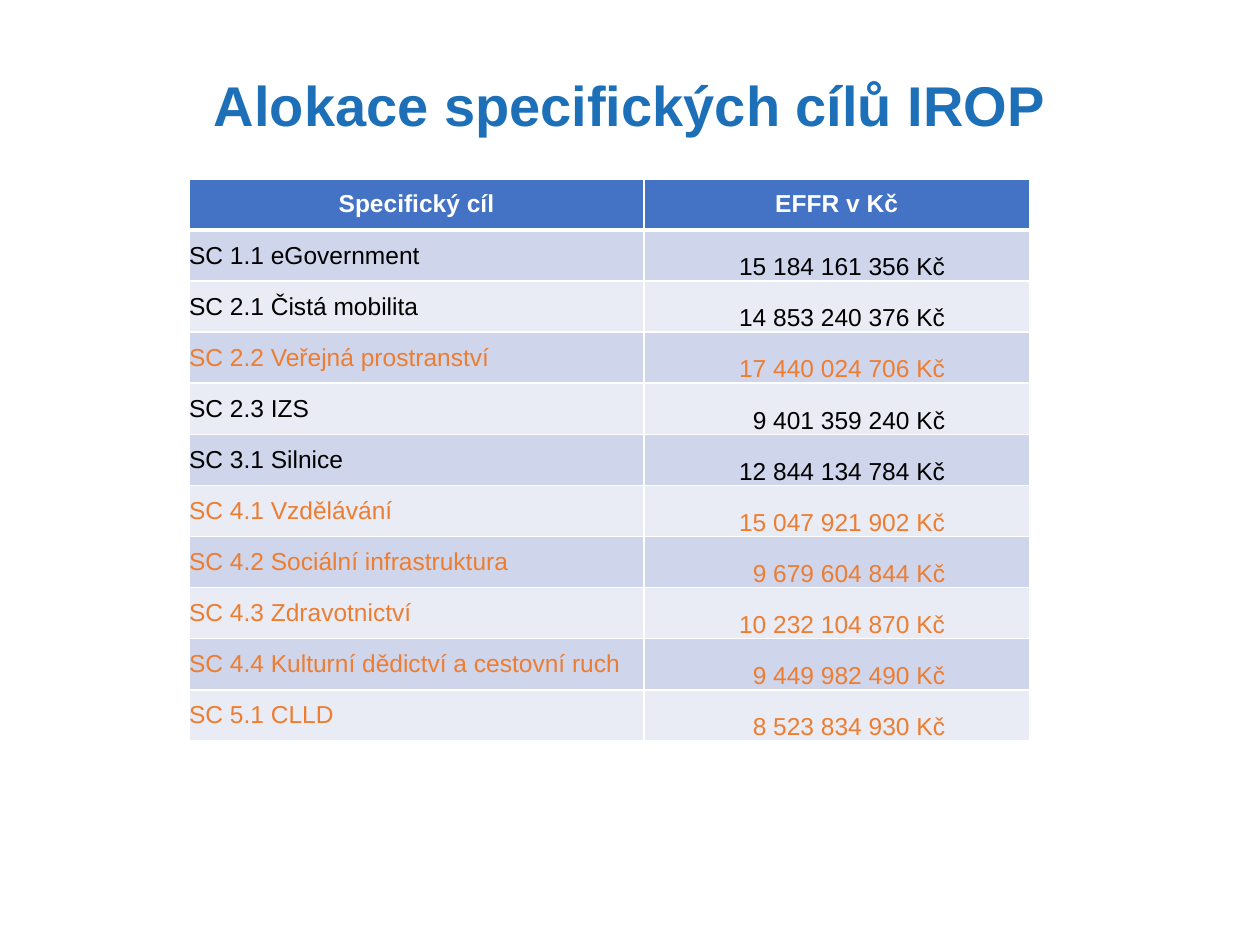
import pptx
import pptx.util
import pptx.dml.color
import pptx.enum.text
import pptx.oxml
import pptx.oxml.ns

Pt = pptx.util.Pt
ALIGN = pptx.enum.text.PP_ALIGN
ANCHOR = pptx.enum.text.MSO_ANCHOR

FONT = "Arial"
COLORS = {
    "title": "1D70B8",
    "header": "4472C4",
    "band_dark": "CFD5EA",
    "band_light": "E9EBF5",
    "white": "FFFFFF",
    "text": "000000",
    "accent": "ED7D31",
}

HEADINGS = ("Specifický cíl", "EFFR v Kč")
# Goal, allocation, text colour
GOALS = [
    ("SC 1.1 eGovernment", "15 184 161 356 Kč", "text"),
    ("SC 2.1 Čistá mobilita", "14 853 240 376 Kč", "text"),
    ("SC 2.2 Veřejná prostranství", "17 440 024 706 Kč", "accent"),
    ("SC 2.3 IZS", "9 401 359 240 Kč", "text"),
    ("SC 3.1 Silnice", "12 844 134 784 Kč", "text"),
    ("SC 4.1 Vzdělávání", "15 047 921 902 Kč", "accent"),
    ("SC 4.2 Sociální infrastruktura", "9 679 604 844 Kč", "accent"),
    ("SC 4.3 Zdravotnictví", "10 232 104 870 Kč", "accent"),
    ("SC 4.4 Kulturní dědictví a cestovní ruch", "9 449 982 490 Kč", "accent"),
    ("SC 5.1 CLLD", "8 523 834 930 Kč", "accent"),
]


def rgb(name):
    return pptx.dml.color.RGBColor.from_string(COLORS[name])


def write(paragraph, text, size, color, bold=False, align=ALIGN.LEFT):
    paragraph.text = text
    paragraph.alignment = align
    font = paragraph.font
    font.name, font.size, font.bold = FONT, Pt(size), bold
    font.color.rgb = rgb(color)


def set_borders(cell, **widths):
    """Draw white cell borders; widths are in points, keyed L, R, T, B."""
    properties = cell._tc.get_or_add_tcPr()
    for index, (side, width) in enumerate(widths.items()):
        line = pptx.oxml.parse_xml(
            f'<a:ln{side} {pptx.oxml.ns.nsdecls("a")} w="{Pt(width)}">'
            f'<a:solidFill><a:srgbClr val="{COLORS["white"]}"/></a:solidFill>'
            f'</a:ln{side}>')
        properties.insert(index, line)


def style_cell(cell, fill, anchor, top=1, bottom=1, margin_right=0):
    cell.fill.solid()
    cell.fill.fore_color.rgb = rgb(fill)
    cell.vertical_anchor = anchor
    cell.margin_left = cell.margin_top = cell.margin_bottom = 0
    cell.margin_right = Pt(margin_right)
    set_borders(cell, L=1, R=1, T=top, B=bottom)


def add_title(page, left, top, width, height):
    box = page.shapes.add_textbox(Pt(left), Pt(top), Pt(width), Pt(height))
    box.text_frame.word_wrap = True
    write(box.text_frame.paragraphs[0], "Alokace specifických cílů IROP",
          32, "title", bold=True, align=ALIGN.CENTER)


def add_allocation_table(page, left, top, width, height):
    row_count = len(GOALS) + 1
    table = page.shapes.add_table(
        row_count, 2, Pt(left), Pt(top), Pt(width), Pt(height)).table
    goal_width = 260
    table.columns[0].width = Pt(goal_width)
    table.columns[1].width = Pt(width - goal_width)
    for row in table.rows:
        row.height = Pt(height / row_count)

    # Header row
    for column, heading in enumerate(HEADINGS):
        cell = table.cell(0, column)
        style_cell(cell, "header", ANCHOR.MIDDLE, bottom=3)
        write(cell.text_frame.paragraphs[0], heading, 14, "white",
              bold=True, align=ALIGN.CENTER)

    # Goals in alternating bands
    for row, (goal, amount, color) in enumerate(GOALS, start=1):
        fill = "band_dark" if row % 2 else "band_light"
        line = 3 if row == 1 else 1
        goal_cell, amount_cell = table.cell(row, 0), table.cell(row, 1)
        style_cell(goal_cell, fill, ANCHOR.MIDDLE, top=line)
        write(goal_cell.text_frame.paragraphs[0], goal, 14, color)
        style_cell(amount_cell, fill, ANCHOR.BOTTOM, top=line, margin_right=48)
        write(amount_cell.text_frame.paragraphs[0], amount, 14, color,
              align=ALIGN.RIGHT)


def main():
    deck = pptx.Presentation()
    deck.slide_width, deck.slide_height = Pt(720), Pt(540)
    page = deck.slides.add_slide(deck.slide_layouts[6])
    add_title(page, 39.6, 36.7, 640.8, 46)
    add_allocation_table(page, 108, 102.2, 480.2, 321.2)
    deck.save("out.pptx")


if __name__ == "__main__":
    main()
